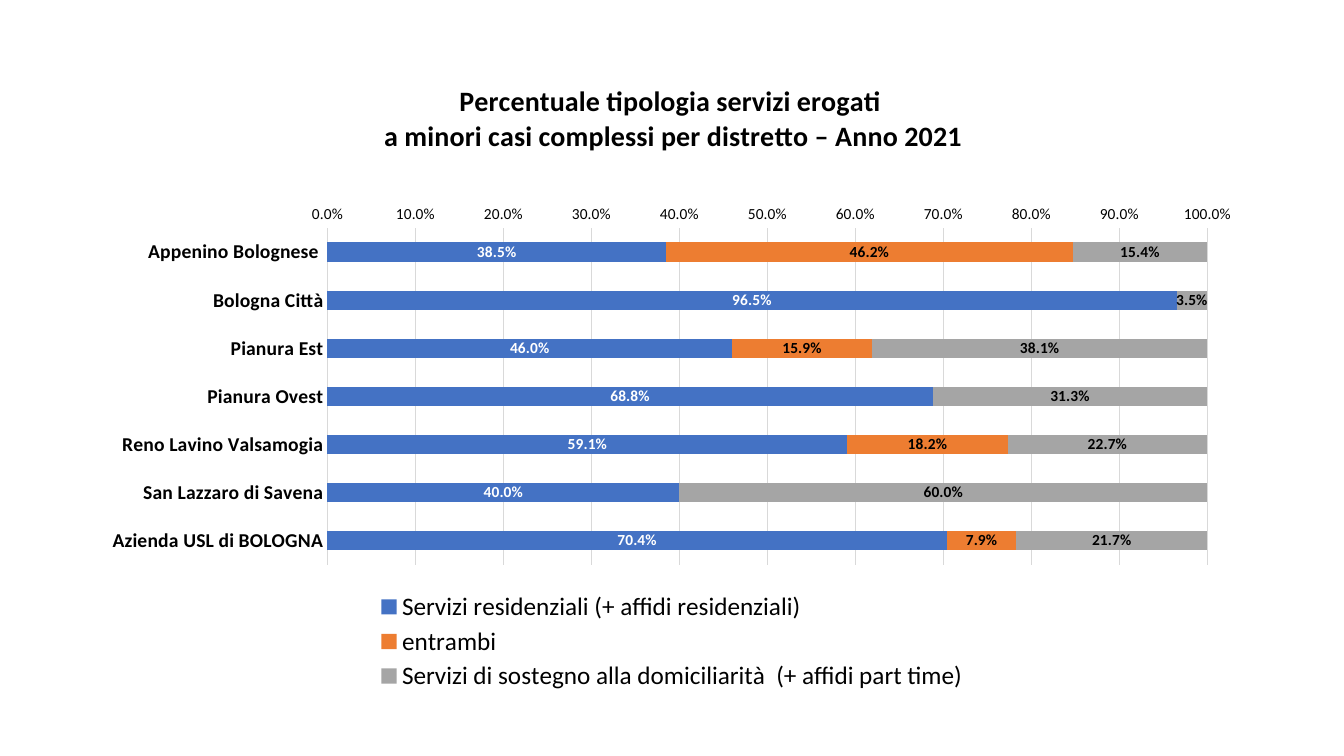
from dataclasses import dataclass

from lxml.etree import SubElement
from pptx import Presentation
from pptx.chart.data import CategoryChartData
from pptx.dml.color import RGBColor
from pptx.enum.chart import XL_CHART_TYPE, XL_LEGEND_POSITION, XL_TICK_MARK
from pptx.enum.text import PP_ALIGN
from pptx.oxml.ns import qn
from pptx.util import Inches, Pt


@dataclass(frozen=True)
class Theme:
    face: str = "Calibri"
    ink: str = "000000"
    paper: str = "FFFFFF"
    rule: str = "D9D9D9"
    residential: str = "4472C4"
    both: str = "ED7D31"
    home: str = "A5A5A5"
    title_size: int = 20
    legend_size: int = 18
    category_size: int = 14
    label_size: int = 11
    base_size: int = 10
    line_width: float = 0.75


THEME = Theme()
TITLE = (
    "Percentuale tipologia servizi erogati ",
    "a minori casi complessi per distretto – Anno 2021",
)
DISTRICTS = (
    "Appenino Bolognese ",
    "Bologna Città",
    "Pianura Est",
    "Pianura Ovest",
    "Reno Lavino Valsamogia",
    "San Lazzaro di Savena",
    "Azienda USL di BOLOGNA",
)
SERVICES = (
    ("Servizi residenziali (+ affidi residenziali)", THEME.residential, THEME.paper,
     (0.385, 0.965, 0.46, 0.688, 0.591, 0.4, 0.704)),
    ("entrambi", THEME.both, THEME.ink,
     (0.462, 0, 0.159, 0, 0.182, 0, 0.079)),
    ("Servizi di sostegno alla domiciliarità  (+ affidi part time)", THEME.home, THEME.ink,
     (0.154, 0.035, 0.381, 0.313, 0.227, 0.6, 0.217)),
)


def style_font(font, size, colour=THEME.ink, bold=False):
    font.name = THEME.face
    font.size = Pt(size)
    font.bold = bold
    font.color.rgb = RGBColor.from_string(colour)


def style_line(line):
    line.color.rgb = RGBColor.from_string(THEME.rule)
    line.width = Pt(THEME.line_width)


def place_part(part, after=None, inner=False, **shares):
    for layout in part.findall(qn("c:layout")):
        part.remove(layout)
    layout = SubElement(part, qn("c:layout"))
    part.insert(0 if after is None else part.index(part.find(qn(after))) + 1, layout)
    manual = SubElement(layout, qn("c:manualLayout"))
    if inner:
        SubElement(manual, qn("c:layoutTarget")).set("val", "inner")
    for side in ("x", "y"):
        SubElement(manual, qn(f"c:{side}Mode")).set("val", "edge")
    for side, share in shares.items():
        SubElement(manual, qn(f"c:{side}")).set("val", str(share))


def add_services_chart(deck, page):
    data = CategoryChartData(number_format="0.0%")
    data.categories = DISTRICTS
    for name, _, _, shares in SERVICES:
        data.add_series(name, shares)
    width, height = deck.slide_width, deck.slide_height
    frame = page.shapes.add_chart(
        XL_CHART_TYPE.BAR_STACKED,
        round(width * 0.067), round(height * 0.08),
        round(width * 0.866), round(height * 0.84), data,
    )
    style_font(frame.chart.font, THEME.base_size)
    return frame.chart


def format_title(chart):
    chart.has_title = True
    text = chart.chart_title.text_frame
    text.text = "\n".join(TITLE)
    for para in text.paragraphs:
        para.alignment = PP_ALIGN.CENTER
        style_font(para.font, THEME.title_size, bold=True)
    place_part(chart.chart_title._element, after="c:tx", x=0.25, y=0.03)


def format_bars(chart):
    plot = chart.plots[0]
    plot.gap_width = 150
    plot.overlap = 100
    plot.vary_by_categories = False
    for series, (_, colour, label_colour, _) in zip(plot.series, SERVICES):
        series.format.fill.solid()
        series.format.fill.fore_color.rgb = RGBColor.from_string(colour)
        labels = series.data_labels
        labels.show_value = True
        labels.number_format = "0.0%;;"
        labels.number_format_is_linked = False
        style_font(labels.font, THEME.label_size, label_colour, bold=True)


def format_axes(chart):
    districts, percent = chart.category_axis, chart.value_axis
    for axis in (districts, percent):
        axis.major_tick_mark = axis.minor_tick_mark = XL_TICK_MARK.NONE
    districts.reverse_order = True
    style_line(districts.format.line)
    style_font(districts.tick_labels.font, THEME.category_size, bold=True)
    percent.minimum_scale, percent.maximum_scale, percent.major_unit = 0, 1, 0.1
    percent.format.line.fill.background()
    percent.has_major_gridlines = True
    style_line(percent.major_gridlines.format.line)
    percent.tick_labels.number_format = "0.0%"
    percent.tick_labels.number_format_is_linked = False
    style_font(percent.tick_labels.font, THEME.label_size)


def format_legend(chart):
    chart.has_legend = True
    legend = chart.legend
    legend.position = XL_LEGEND_POSITION.BOTTOM
    legend.include_in_layout = False
    style_font(legend.font, THEME.legend_size)
    place_part(legend._element, after="c:legendPos", x=0.24, y=0.83, w=0.52, h=0.17)


def main():
    deck = Presentation()
    deck.slide_width, deck.slide_height = Inches(13.33), Inches(7.5)
    page = deck.slides.add_slide(deck.slide_layouts[6])
    chart = add_services_chart(deck, page)
    format_title(chart)
    format_bars(chart)
    format_axes(chart)
    format_legend(chart)
    plot_area = chart._chartSpace.chart.plotArea
    place_part(plot_area, inner=True, x=0.204, y=0.264, w=0.756, h=0.53)
    deck.save("out.pptx")


if __name__ == "__main__":
    main()
